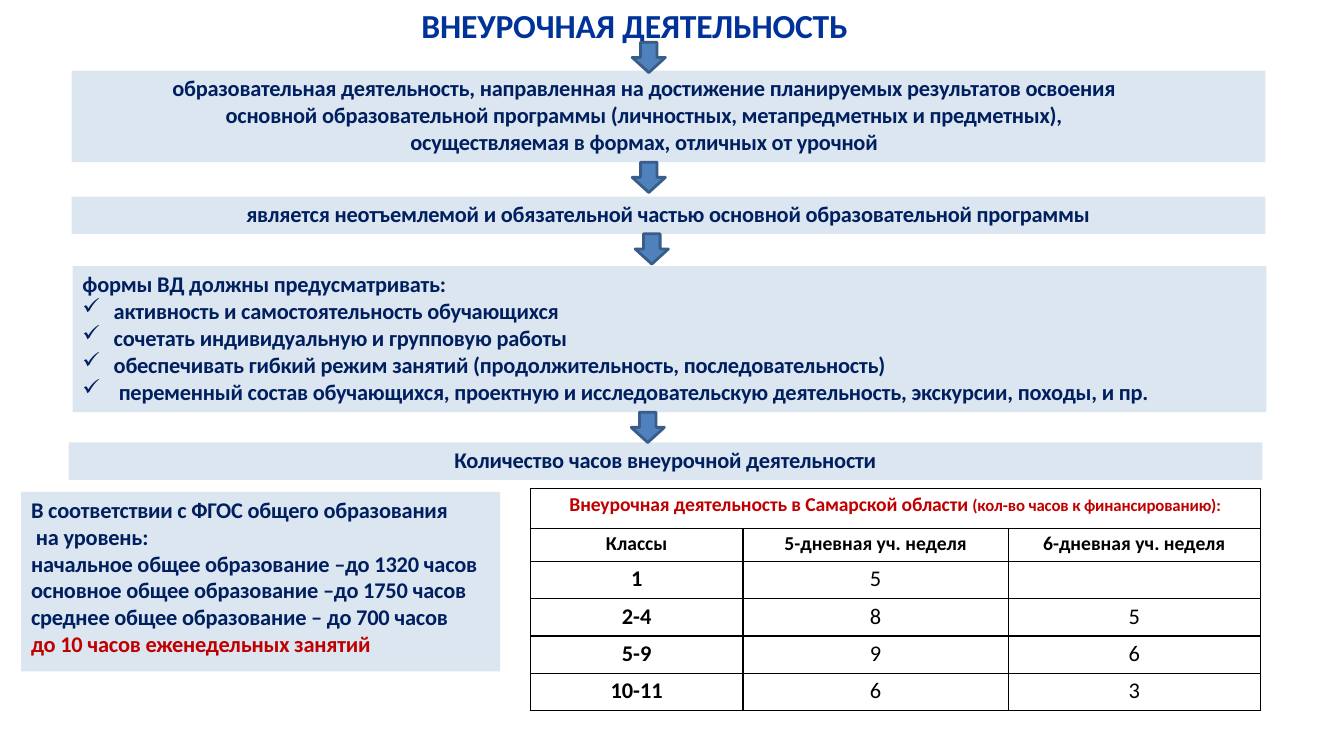
from dataclasses import dataclass

from lxml import etree
from pptx import Presentation
from pptx import util as u
from pptx.dml.color import RGBColor
from pptx.enum import shapes, text
from pptx.oxml import ns

# Content: positions and sizes in px, 100 px to the inch
SLIDE = (1333, 750)
TITLE = "ВНЕУРОЧНАЯ ДЕЯТЕЛЬНОСТЬ"
TITLE_BOX = (417, 1, 671, 43)
DEFINITION = [
    "образовательная деятельность, направленная на достижение планируемых результатов освоения",
    "основной образовательной программы (личностных, метапредметных и предметных),",
    "осуществляемая в формах, отличных от урочной",
]
STATUS = ["является неотъемлемой и обязательной частью основной образовательной программы"]
FORMS_HEAD = "формы ВД должны предусматривать:"
FORMS = [
    "активность и самостоятельность обучающихся",
    "сочетать индивидуальную и групповую работы",
    "обеспечивать гибкий режим занятий (продолжительность, последовательность)",
    "переменный состав обучающихся, проектную и исследовательскую деятельность, "
    "экскурсии, походы, и пр.",
]
FORM_INDENTS = [41, 41, 41, 46]
HOURS = ["Количество часов внеурочной деятельности"]
NORMS = [
    "В соответствии с ФГОС общего образования",
    " на уровень:",
    "начальное общее образование –до 1320 часов",
    "основное общее образование –до 1750 часов",
    "среднее общее образование – до 700 часов",
]
WEEKLY_LIMIT = "до 10 часов еженедельных занятий"
NORMS_BOX = (21, 488, 475, 178)

# Steps of the flow: box, lines, centred, right inset
STEPS = [
    ((71, 70, 1184, 91), DEFINITION, True, 48),
    ((71, 195, 1184, 37), STATUS, True, 0),
    ((72, 264, 1184, 145), [FORMS_HEAD, *FORMS], False, 0),
    ((68, 439, 1184, 37), HOURS, True, 0),
]
ARROW_LEFTS = [627, 627, 630, 626]
ARROW_SIZE = (33, 30)

TABLE_AT = (526, 485)
COLUMNS = [211, 263, 250]
ROWS = [39, 33, 37, 37, 37, 37]
TABLE_TITLE = "Внеурочная деятельность в Самарской области "
TABLE_NOTE = "(кол-во часов к финансированию):"
TABLE = [
    ("Классы", "5-дневная уч. неделя", "6-дневная уч. неделя"),
    ("1", "5", ""),
    ("2-4", "8", "5"),
    ("5-9", "9", "6"),
    ("10-11", "6", "3"),
]


@dataclass(frozen=True)
class Theme:
    font: str = "Calibri"
    title: str = "003399"
    body: str = "001F5F"
    accent: str = "C00000"
    black: str = "000000"
    panel: str = "DCE6F1"
    arrow: str = "4F81BC"
    arrow_line: str = "385D89"
    title_size: int = 24
    body_size: int = 16
    table_size: int = 14
    note_size: int = 12
    tracking: int = -15
    space_before: float = 2.7


T = Theme()
PX = 9144


def px(*lengths):
    return [u.Emu(length * PX) for length in lengths]


def rgb(value):
    return RGBColor.from_string(value)


def style(run, size, color, bold=True, tracking=0):
    run.font.name = T.font
    run.font.size = u.Pt(size)
    run.font.bold = bold
    run.font.color.rgb = rgb(color)
    if tracking:
        run._r.get_or_add_rPr().set("spc", str(tracking))


def set_insets(frame, left=0, right=0):
    frame.margin_left, frame.margin_top, frame.margin_right, frame.margin_bottom = px(
        left, 4, right, 0)
    frame.word_wrap = True
    frame.vertical_anchor = text.MSO_ANCHOR.TOP


def add_panel(box, lines, centred, right=0):
    panel = slide.shapes.add_shape(shapes.MSO_SHAPE.RECTANGLE, *px(*box))
    panel.shadow.inherit = False
    panel.fill.solid()
    panel.fill.fore_color.rgb = rgb(T.panel)
    panel.line.fill.background()
    frame = panel.text_frame
    set_insets(frame, 0 if centred else 10, right)
    frame.text = "\n".join(lines)
    frame.paragraphs[0].space_before = u.Pt(T.space_before)
    for line in frame.paragraphs:
        line.alignment = text.PP_ALIGN.CENTER if centred else text.PP_ALIGN.LEFT
        style(line.runs[0], T.body_size, T.body, tracking=T.tracking)
    return frame.paragraphs


def add_check(line, indent):
    props = line._p.get_or_add_pPr()
    hang = px(indent - 10)[0]
    props.set("marL", str(hang))
    props.set("indent", str(-hang))
    etree.SubElement(props, ns.qn("a:buChar")).set("char", "✓")


def add_arrow(left, top):
    arrow = slide.shapes.add_shape(shapes.MSO_SHAPE.DOWN_ARROW, *px(left, top, *ARROW_SIZE))
    arrow.shadow.inherit = False
    arrow.fill.solid()
    arrow.fill.fore_color.rgb = rgb(T.arrow)
    arrow.line.color.rgb = rgb(T.arrow_line)
    arrow.line.width = u.Pt(2)


def format_cell(cell):
    cell.fill.background()
    cell.margin_left, cell.margin_top, cell.margin_right, cell.margin_bottom = px(0, 4, 0, 0)
    props = cell._tc.get_or_add_tcPr()
    for position, side in enumerate(("lnL", "lnR", "lnT", "lnB")):
        border = etree.Element(ns.qn("a:" + side), w=str(u.Pt(1)))
        fill = etree.SubElement(border, ns.qn("a:solidFill"))
        etree.SubElement(fill, ns.qn("a:srgbClr")).set("val", T.black)
        props.insert(position, border)


def centre_cell(cell):
    line = cell.text_frame.paragraphs[0]
    line.alignment = text.PP_ALIGN.CENTER
    line.space_before = u.Pt(T.space_before)
    return line


prs = Presentation()
prs.slide_width, prs.slide_height = px(*SLIDE)
slide = prs.slides.add_slide(prs.slide_layouts[6])

# Title
title = slide.shapes.add_textbox(*px(*TITLE_BOX)).text_frame
set_insets(title, 1)
title.text = TITLE
style(title.paragraphs[0].runs[0], T.title_size, T.title, tracking=T.tracking)

# Flow of steps, with an arrow under the title and under each step but the last
panels = [add_panel(*step) for step in STEPS]
for check, indent in zip(panels[2][1:], FORM_INDENTS):
    add_check(check, indent)
arrow_tops = [42] + [top + height for (_, top, _, height), *_ in STEPS[:-1]]
for left, top in zip(ARROW_LEFTS, arrow_tops):
    add_arrow(left, top)

# Hours by level of education
norms = add_panel(NORMS_BOX, [*NORMS, WEEKLY_LIMIT], False)
norms[-1].runs[0].font.color.rgb = rgb(T.accent)

# Table of funded hours
hours = slide.shapes.add_table(
    len(ROWS), len(COLUMNS), *px(*TABLE_AT, sum(COLUMNS), sum(ROWS))).table
hours.first_row = hours.horz_banding = False
for column, width in zip(hours.columns, px(*COLUMNS)):
    column.width = width
for row, height in zip(hours.rows, px(*ROWS)):
    row.height = height
for cell in hours.iter_cells():
    format_cell(cell)

hours.cell(0, 0).merge(hours.cell(0, 2))
heading = centre_cell(hours.cell(0, 0))
for words, size in ((TABLE_TITLE, T.table_size), (TABLE_NOTE, T.note_size)):
    run = heading.add_run()
    run.text = words
    style(run, size, T.accent, tracking=-10)

for r, values in enumerate(TABLE, start=1):
    for c, value in enumerate(values):
        if value:
            line = centre_cell(hours.cell(r, c))
            line.text = value
            size = T.table_size if r == 1 else T.body_size
            style(line.runs[0], size, T.black, bold=r == 1 or c == 0)

prs.save("out.pptx")
